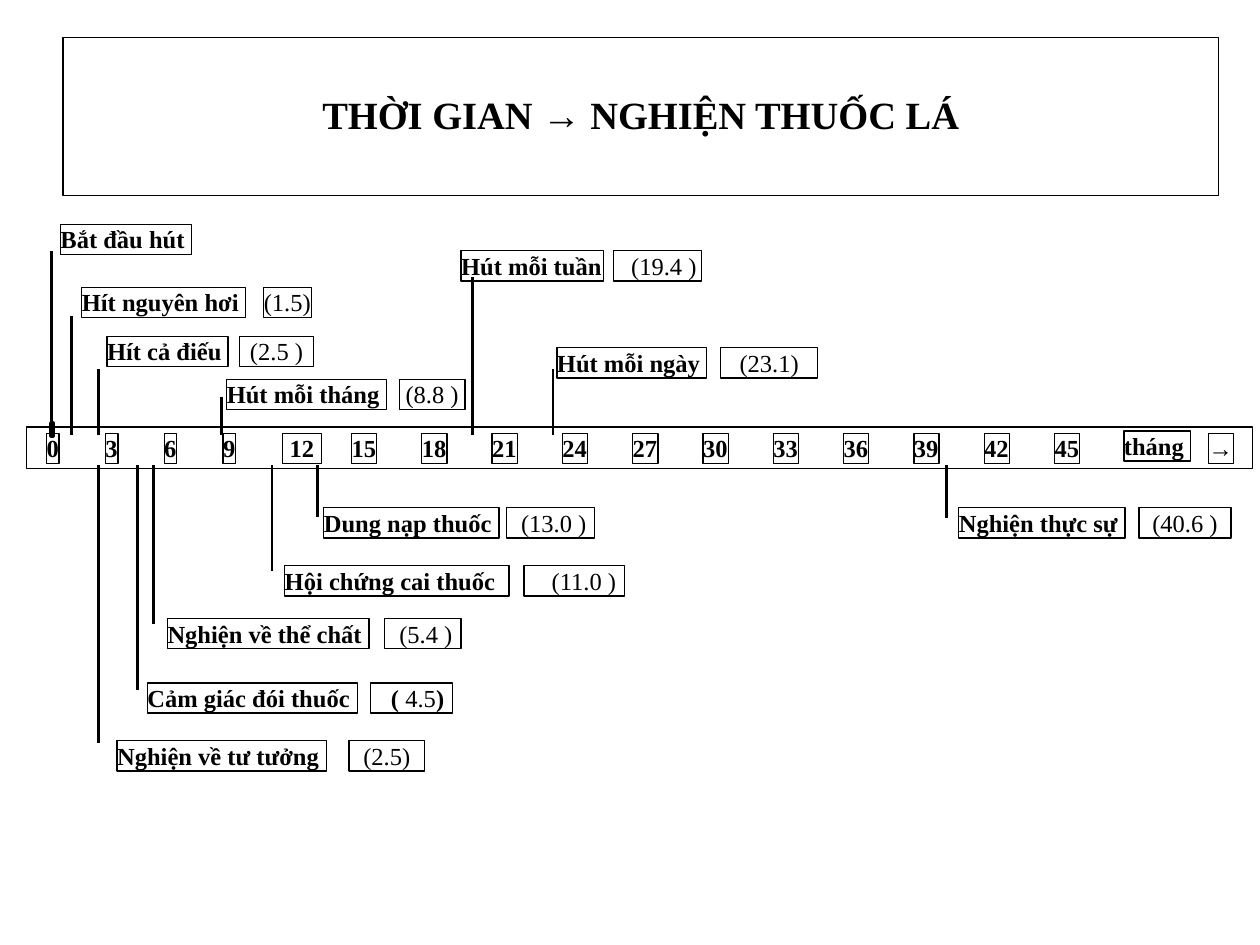
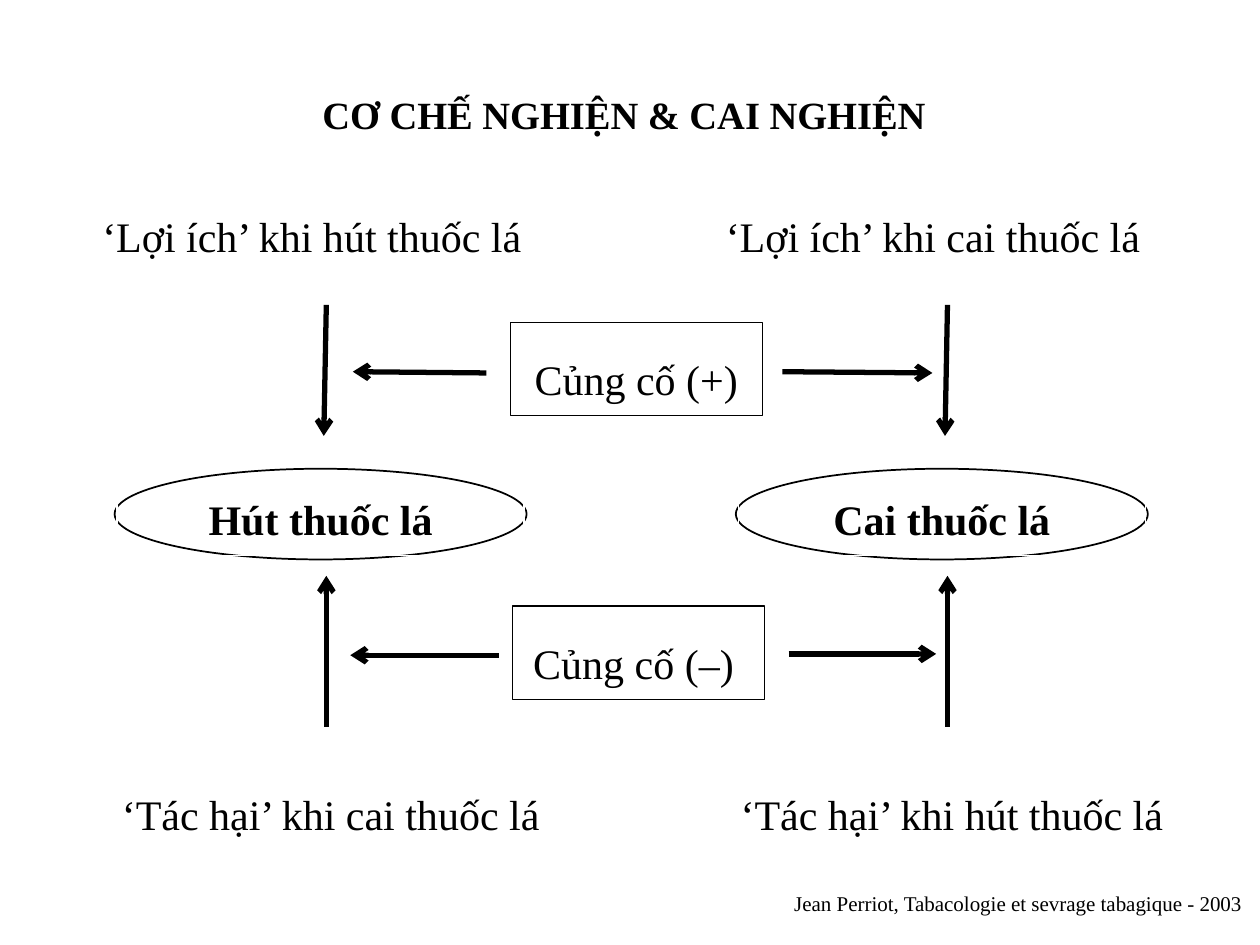
from lxml import etree
from pptx import Presentation
from pptx.dml.color import RGBColor
from pptx.enum import shapes, text
from pptx.oxml import ns
from pptx.util import Inches, Pt

COLORS = {"ink": "000000", "paper": "FFFFFF"}
FONT = "Times New Roman"
LEFT, CENTER, RIGHT = text.PP_ALIGN.LEFT, text.PP_ALIGN.CENTER, text.PP_ALIGN.RIGHT
RECTANGLE = shapes.MSO_SHAPE.RECTANGLE
TITLE = {"size": 22, "bold": True, "spacing": 0.9, "anchor": text.MSO_ANCHOR.MIDDLE}
TIMELINE = {"size": 14, "inset": (0, 0)}
LABEL = {**TIMELINE, "bold": True, "align": LEFT}
DIAGRAM = {"size": 24, "spacing": 1.5}
PLAIN = {**DIAGRAM, "line": "paper"}


def add_box(slide, position, runs=(), kind=RECTANGLE, size=14, bold=False, align=CENTER,
            spacing=1.0, anchor=text.MSO_ANCHOR.TOP, inset=(0.1, 0.05), pad=0,
            line="ink", width=0.75, fill=None):
    shape = slide.shapes.add_shape(kind, *map(Inches, position))
    shape.shadow.inherit = False
    if fill:
        shape.fill.solid()
        shape.fill.fore_color.rgb = RGBColor.from_string(COLORS[fill])
    else:
        shape.fill.background()
    shape.line.color.rgb = RGBColor.from_string(COLORS[line])
    shape.line.width = Pt(width)
    if not runs:
        return
    frame = shape.text_frame
    side, edge = map(Inches, inset)
    frame_format = {"word_wrap": True, "vertical_anchor": anchor,
                    "margin_left": side + Inches(pad), "margin_right": side,
                    "margin_top": edge, "margin_bottom": edge}
    for name, value in frame_format.items():
        setattr(frame, name, value)
    paragraph = frame.paragraphs[0]
    paragraph.alignment = align
    paragraph.line_spacing = spacing
    for wording, heavy in [(runs, bold)] if isinstance(runs, str) else runs:
        run = paragraph.add_run()
        run.text = wording
        for name, value in {"name": FONT, "size": Pt(size), "bold": heavy}.items():
            setattr(run.font, name, value)
        run.font.color.rgb = RGBColor.from_string(COLORS["ink"])


def add_line(slide, start, end, width=1.5, arrow=False):
    connector = slide.shapes.add_connector(
        shapes.MSO_CONNECTOR.STRAIGHT, *map(Inches, (*start, *end)))
    connector.line.color.rgb = RGBColor.from_string(COLORS["ink"])
    connector.line.width = Pt(width)
    if arrow:
        outline = connector.line._get_or_add_ln()
        etree.SubElement(outline, ns.qn("a:tailEnd"), type="arrow")
    etree.SubElement(connector._element.spPr, ns.qn("a:effectLst"))


presentation = Presentation()
presentation.slide_width, presentation.slide_height = Inches(10), Inches(7.5)
blank = presentation.slide_layouts[6]

slide = presentation.slides.add_slide(blank)
add_box(slide, (0.5, 0.3, 9.17, 1.25), "THỜI GIAN → NGHIỆN THUỐC LÁ", **TITLE)
add_box(slide, (0.41, 3.36, 0.01, 0.1), fill="ink", width=3)
add_box(slide, (0.21, 3.39, 9.73, 0.33))

for index, month in enumerate(range(0, 12, 3)):
    add_box(slide, (0.37 + 0.467 * index, 3.44, 0.1, 0.24), str(month), **LABEL)
add_box(slide, (2.24, 3.44, 0.31, 0.24), "12", **TIMELINE, bold=True)
for index, month in enumerate(range(15, 48, 3)):
    add_box(slide, (2.79 + 0.558 * index, 3.44, 0.2, 0.24), str(month), **LABEL)
add_box(slide, (8.92, 3.42, 0.53, 0.24), "tháng", **LABEL)
add_box(slide, (9.59, 3.44, 0.2, 0.24), "→", **LABEL)

stages = [
    ("Bắt đầu hút", 0.48, 1.78, 1.04, None),
    ("Hít nguyên hơi", 0.65, 2.28, 1.3, ("(1.5)", 2.09, 0.38, 0)),
    ("Hít cả điếu", 0.85, 2.67, 0.96, ("(2.5 )", 1.9, 0.59, 0)),
    ("Hút mỗi tháng", 1.8, 3.01, 1.27, ("(8.8 )", 3.17, 0.52, 0)),
    ("Hút mỗi tuần", 3.66, 1.99, 1.13, ("(19.4 )", 4.87, 0.7, 0.1)),
    ("Hút mỗi ngày", 4.42, 2.76, 1.19, ("(23.1)", 5.72, 0.77, 0)),
    ("Dung nạp thuốc", 2.57, 4.03, 1.39, ("(13.0 )", 4.02, 0.7, 0.05)),
    ("Nghiện thực sự", 7.61, 4.03, 1.32, ("(40.6 )", 9.04, 0.73, 0)),
    ("Hội chứng cai thuốc", 2.26, 4.49, 1.78, ("(11.0 )", 4.16, 0.8, 0.15)),
    ("Nghiện về thể chất", 1.33, 4.91, 1.6, ("(5.4 )", 3.05, 0.61, 0.05)),
    ("Cảm giác đói thuốc", 1.17, 5.42, 1.67,
     ([("( ", True), ("4.5", False), (")", True)], 2.94, 0.65, 0.1)),
    ("Nghiện về tư tưởng", 0.93, 5.88, 1.66, ("(2.5)", 2.77, 0.6, 0)),
]
for label, left, top, width, value in stages:
    add_box(slide, (left, top, width, 0.24), label, **LABEL)
    if value:
        months, value_left, value_width, pad = value
        add_box(slide, (value_left, top, value_width, 0.24), months, **TIMELINE, pad=pad)

leaders_above = [(0.41, 1.99), (0.57, 2.51), (0.78, 2.93), (1.76, 3.15), (3.75, 2.2), (4.39, 2.93)]
leaders_below = [(0.78, 5.9), (1.09, 5.48), (1.22, 4.95), (2.16, 4.53), (2.52, 4.1), (7.51, 4.11)]
for axis, leaders in ((3.45, leaders_above), (3.69, leaders_below)):
    for x, end in leaders:
        add_line(slide, (x, axis), (x, end))

slide = presentation.slides.add_slide(blank)
add_box(slide, (2.46, 0.2, 5.17, 1.45), "CƠ CHẾ NGHIỆN & CAI NGHIỆN", **TITLE, align=LEFT, line="paper")

columns = [
    (0, "Hút thuốc lá", "‘Lợi ích’ khi hút thuốc lá", "‘Tác hại’ khi cai thuốc lá"),
    (4.93, "Cai thuốc lá", "‘Lợi ích’ khi cai thuốc lá", "‘Tác hại’ khi hút thuốc lá"),
]
for offset, behaviour, benefit, harm in columns:
    add_box(slide, (0.91 + offset, 3.72, 3.27, 0.72), kind=shapes.MSO_SHAPE.OVAL, fill="paper", width=1)
    add_box(slide, (0.43 + offset, 1.42, 4.09, 0.74), benefit, **PLAIN)
    add_box(slide, (0.93 + offset, 3.67, 3.23, 0.74), behaviour, **PLAIN, bold=True)
    add_box(slide, (0.59 + offset, 6.01, 4.07, 0.74), harm, **PLAIN)
    add_line(slide, (2.59 + offset, 2.42), (2.57 + offset, 3.46), 3, True)
    add_line(slide, (2.59 + offset, 5.77), (2.59 + offset, 4.57), 3, True)

reinforcements = [
    ("Củng cố (+)", 4.05, 2.56, [((3.86, 2.96), (2.8, 2.95)), ((6.21, 2.95), (7.4, 2.96))]),
    ("Củng cố (–) ", 4.07, 4.81, [((3.96, 5.2), (2.78, 5.2)), ((6.26, 5.19), (7.43, 5.19))]),
]
for label, left, top, arrows in reinforcements:
    add_box(slide, (left, top, 2, 0.74), label, **DIAGRAM)
    for start, end in arrows:
        add_line(slide, start, end, 3, True)

add_box(slide, (3.66, 6.92, 6.3, 0.37), "Jean Perriot, Tabacologie et sevrage tabagique - 2003",
        size=12, spacing=1.5, align=RIGHT, line="paper")

presentation.save("out.pptx")
